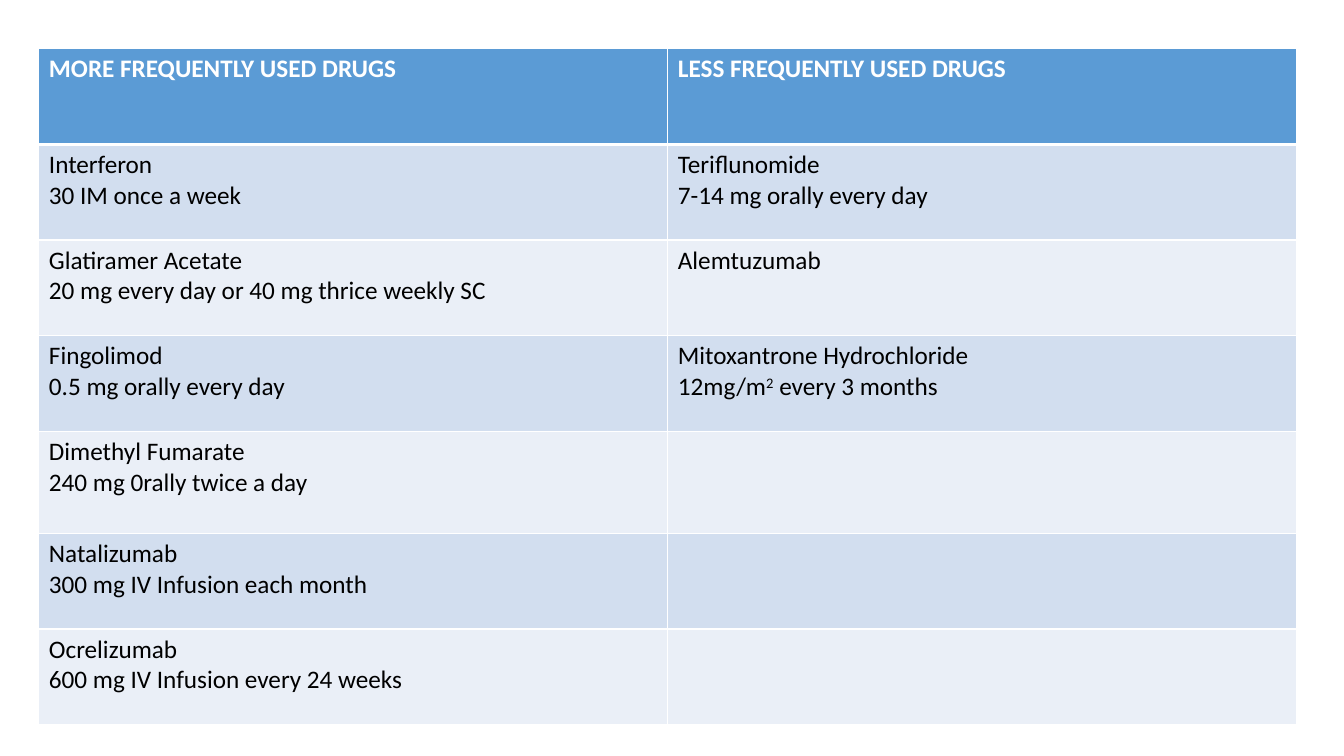
from lxml import etree
from pptx import Presentation
from pptx.dml.color import RGBColor
from pptx.oxml.ns import qn
from pptx.util import Cm, Pt

WHITE, BLACK, HEADER_BLUE = "FFFFFF", "000000", "5B9BD5"
BAND_FILLS = ("D2DEEF", "EAEFF7")
ROW_HEIGHT, TALL_ROW_HEIGHT, COLUMN_WIDTH = 2.41, 2.57, 15.85
TALL_ROW = 4

HEADINGS = ("MORE FREQUENTLY USED DRUGS", "LESS FREQUENTLY USED DRUGS")
# Each cell holds lines; ^ marks the start and end of a superscript
DRUGS = [
    (("Interferon", "30 IM once a week"),
     ("Teriflunomide", "7-14 mg orally every day")),
    (("Glatiramer Acetate", "20 mg every day or 40 mg thrice weekly SC"),
     ("Alemtuzumab",)),
    (("Fingolimod", "0.5 mg orally every day"),
     ("Mitoxantrone Hydrochloride", "12mg/m^2^ every 3 months")),
    (("Dimethyl Fumarate", "240 mg 0rally twice a day"), ()),
    (("Natalizumab", "300 mg IV Infusion each month"), ()),
    (("Ocrelizumab", "600 mg IV Infusion every 24 weeks"), ()),
]


def color(value):
    return RGBColor.from_string(value)


def add_borders(cell, bottom_width):
    """Draw white borders; they must precede the fill in the cell XML."""
    properties = cell._tc.get_or_add_tcPr()
    for index, side in enumerate(("lnL", "lnR", "lnT", "lnB")):
        width = bottom_width if side == "lnB" else 1
        line = etree.Element(qn(f"a:{side}"), w=str(Pt(width)))
        fill = etree.SubElement(line, qn("a:solidFill"))
        etree.SubElement(fill, qn("a:srgbClr"), val=WHITE)
        properties.insert(index, line)


def write_line(para, line, font_color, bold):
    for index, piece in enumerate(line.split("^")):
        span = para.add_run()
        span.text = piece
        if index % 2:
            span.font._element.set("baseline", "30000")
    para.font.name = "Calibri"
    para.font.size = Pt(18)
    para.font.bold = bold
    para.font.color.rgb = color(font_color)


def fill_cell(cell, lines, fill, font_color=BLACK, bold=False, bottom_width=1):
    cell.fill.solid()
    cell.fill.fore_color.rgb = color(fill)
    add_borders(cell, bottom_width)
    frame = cell.text_frame
    for index, line in enumerate(lines):
        para = frame.add_paragraph() if index else frame.paragraphs[0]
        write_line(para, line, font_color, bold)


def add_drug_table(page):
    row_count = len(DRUGS) + 1
    table = page.shapes.add_table(
        row_count, 2, Cm(0.98), Cm(1.23), Cm(2 * COLUMN_WIDTH),
        Cm(ROW_HEIGHT * (row_count - 1) + TALL_ROW_HEIGHT)).table
    for column in table.columns:
        column.width = Cm(COLUMN_WIDTH)
    for index, row in enumerate(table.rows):
        row.height = Cm(TALL_ROW_HEIGHT if index == TALL_ROW else ROW_HEIGHT)

    # Header row
    for column, heading in enumerate(HEADINGS):
        fill_cell(table.cell(0, column), [heading], HEADER_BLUE,
                  WHITE, bold=True, bottom_width=3)

    # Banded drug rows
    for index, pair in enumerate(DRUGS):
        for column, lines in enumerate(pair):
            fill_cell(table.cell(index + 1, column), lines,
                      BAND_FILLS[index % 2])


def main():
    deck = Presentation()
    deck.slide_width, deck.slide_height = Cm(33.87), Cm(19.05)
    page = deck.slides.add_slide(deck.slide_layouts[6])
    add_drug_table(page)
    deck.save("out.pptx")


if __name__ == "__main__":
    main()
